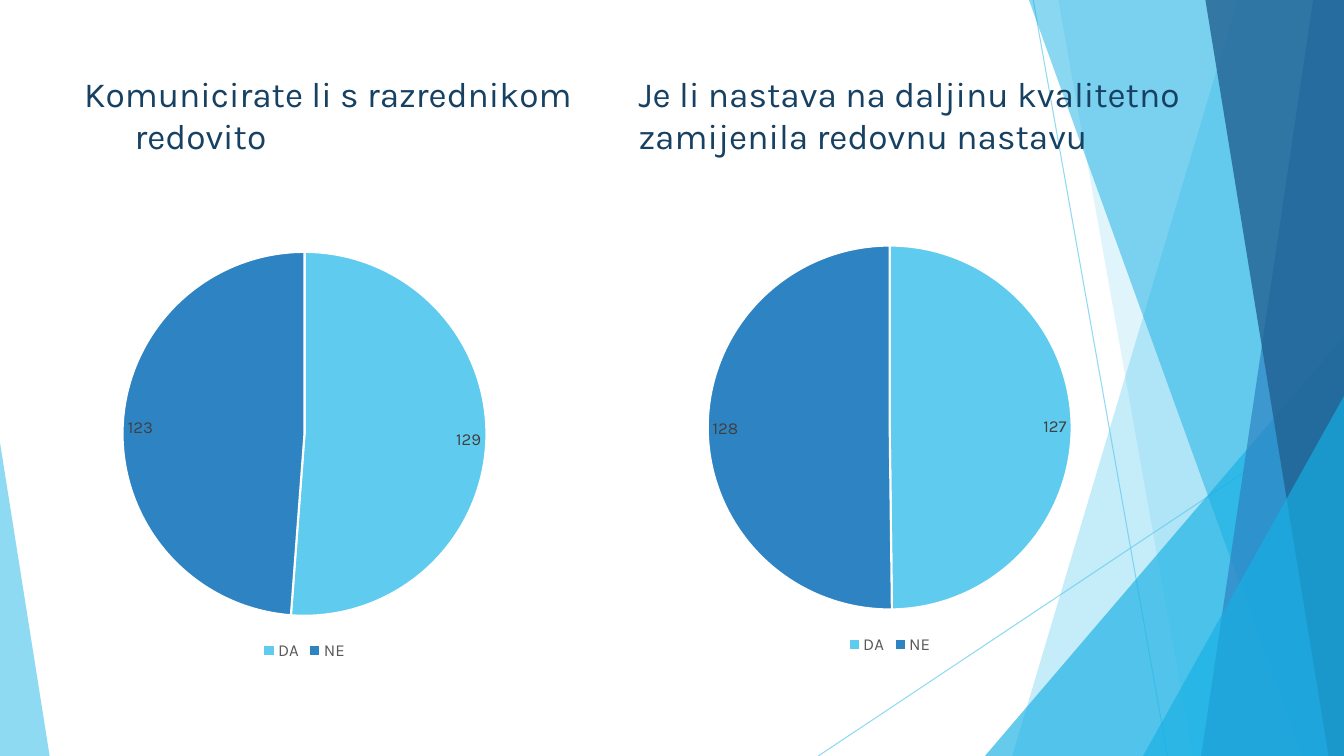
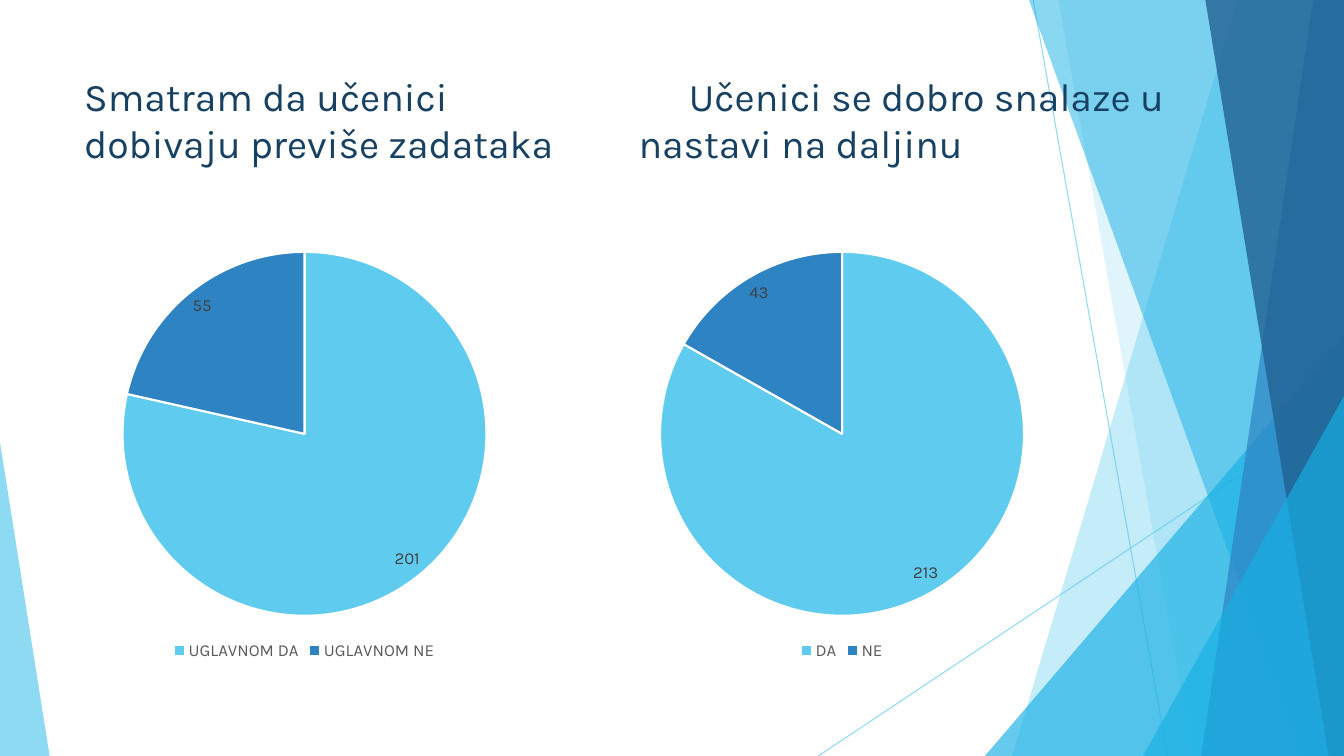
from lxml import etree
from pptx import Presentation
from pptx.chart.data import CategoryChartData
from pptx.dml.color import RGBColor
from pptx.enum.chart import XL_CHART_TYPE, XL_LABEL_POSITION, XL_LEGEND_POSITION
from pptx.enum.shapes import MSO_CONNECTOR, MSO_SHAPE
from pptx.enum.text import MSO_ANCHOR
from pptx.oxml.ns import qn
from pptx.util import Pt

PIE = XL_CHART_TYPE.PIE
BEST = XL_LABEL_POSITION.BEST_FIT
BOTTOM = XL_LEGEND_POSITION.BOTTOM
LINE = MSO_CONNECTOR.STRAIGHT
WEDGE = MSO_SHAPE.ISOSCELES_TRIANGLE
TOP = MSO_ANCHOR.TOP

HUES = {
    "sky": "5FCBEF", "cyan": "17B0E4", "blue": "2E83C3", "deep": "226292",
    "title": "174162", "label": "404040", "legend": "595959",
    "black": "000000", "white": "FFFFFF",
}
WIDE, HIGH = 960, 540

RAYS = [(738, 0, 834, 540), (960, 290, 584.5, 540)]
BANDS = [
    ("quad", "sky", 36, (884, 723)),
    ("quad", "sky", 20, (756, 852)),
    ("wedge", "cyan", 66, (703.5, 240, 256.5, 300, 1)),
    ("quad", "cyan", 50, (735, 930)),
    ("quad", "blue", 70, (938, 858)),
    ("quad", "deep", 80, (861, 949)),
    ("wedge", "cyan", 66, (816.5, 283, 143.5, 257, 1)),
    ("wedge", "sky", 70, (0, 316, 35.5, 224, 0)),
]

SLIDES = [
    {
        "size": 25.2,
        "heads": [
            ("Komunicirate li s razrednikom\vredovito", 36, -36),
            ("Je li nastava na daljinu kvalitetno\vzamijenila redovnu nastavu", 0, 0),
        ],
        "pies": [
            (53, 170, ("DA", "NE"), (129, 123)),
            (471, 165.5, ("DA", "NE"), (127, 128)),
        ],
    },
    {
        "size": 28,
        "heads": [
            ("Smatram da učenici\vdobivaju previše zadataka", 0, 0),
            ("Učenici se dobro snalaze u\vnastavi na daljinu", 0, 36),
        ],
        "pies": [
            (53, 170, ("UGLAVNOM DA", "UGLAVNOM NE"), (201, 55)),
            (437, 170, ("DA", "NE"), (213, 43)),
        ],
    },
]


def style(font, size, hue):
    look = {"name": "Karla", "size": Pt(size), "bold": False}
    for key, value in look.items():
        setattr(font, key, value)
    font.color.rgb = RGBColor.from_string(HUES[hue])


def fade(shape, share):
    tint = shape.element.spPr.find(".//" + qn("a:srgbClr"))
    etree.SubElement(tint, qn("a:alpha")).set("val", str(share * 1000))


deck = Presentation()
deck.slide_width, deck.slide_height = Pt(WIDE), Pt(HIGH)
blank = deck.slide_layouts[6]
pages = [deck.slides.add_slide(blank) for _ in SLIDES]

decor = []
shapes = pages[0].shapes
for ends in RAYS:
    ray = shapes.add_connector(LINE, *map(Pt, ends))
    ray.line.width = Pt(0.75)
    ray.line.color.rgb = RGBColor.from_string(HUES["sky"])
    fade(ray, 70)
    etree.SubElement(ray.element.spPr, qn("a:effectLst"))
    decor.append(ray)

for kind, hue, share, place in BANDS:
    if kind == "quad":
        head, foot = place
        path = shapes.build_freeform(head, 0, scale=Pt(1))
        path.add_line_segments([(WIDE, 0), (WIDE, HIGH), (foot, HIGH)], close=True)
        band = path.convert_to_shape()
    else:
        *box, tip = place
        band = shapes.add_shape(WEDGE, *map(Pt, box))
        band.adjustments[0] = tip
    band.shadow.inherit = False
    band.fill.solid()
    band.fill.fore_color.rgb = RGBColor.from_string(HUES[hue])
    band.line.fill.background()
    fade(band, share)
    decor.append(band)

master = deck.slide_master.shapes.element
for index, part in enumerate(decor, 100):
    part.element.find(".//" + qn("p:cNvPr")).set("id", str(index))
    master.append(part.element)

for page, facts in zip(pages, SLIDES):
    for left, (text, margin, indent) in zip((53, 449), facts["heads"]):
        frame = page.shapes.add_textbox(Pt(left), Pt(48), Pt(411), Pt(104)).text_frame
        frame.word_wrap = True
        frame.vertical_anchor = TOP
        frame.text = text
        para = frame.paragraphs[0]
        props = para._p.get_or_add_pPr()
        for key, value in {"marL": margin, "indent": indent}.items():
            props.set(key, str(Pt(value)))
        for run in para.runs:
            style(run.font, facts["size"], "title")

    for left, top, names, values in facts["pies"]:
        data = CategoryChartData()
        data.categories = names
        data.add_series("Series 1", values)
        chart = page.shapes.add_chart(PIE, Pt(left), Pt(top), Pt(329), Pt(305), data).chart
        style(chart.font, 10, "black")
        chart.has_title = False
        chart.has_legend = True
        legend = chart.legend
        legend.position = BOTTOM
        legend.include_in_layout = False
        style(legend.font, 12, "legend")
        plot = chart.plots[0]
        plot.vary_by_categories = True
        for index, hue in enumerate(("sky", "blue")):
            form = plot.series[0].points[index].format
            form.fill.solid()
            form.fill.fore_color.rgb = RGBColor.from_string(HUES[hue])
            form.line.width = Pt(1.5)
            form.line.color.rgb = RGBColor.from_string(HUES["white"])
        plot.has_data_labels = True
        labels = plot.data_labels
        for key, value in {"show_value": True, "show_percentage": False, "position": BEST}.items():
            setattr(labels, key, value)
        style(labels.font, 12, "label")

deck.save("out.pptx")
